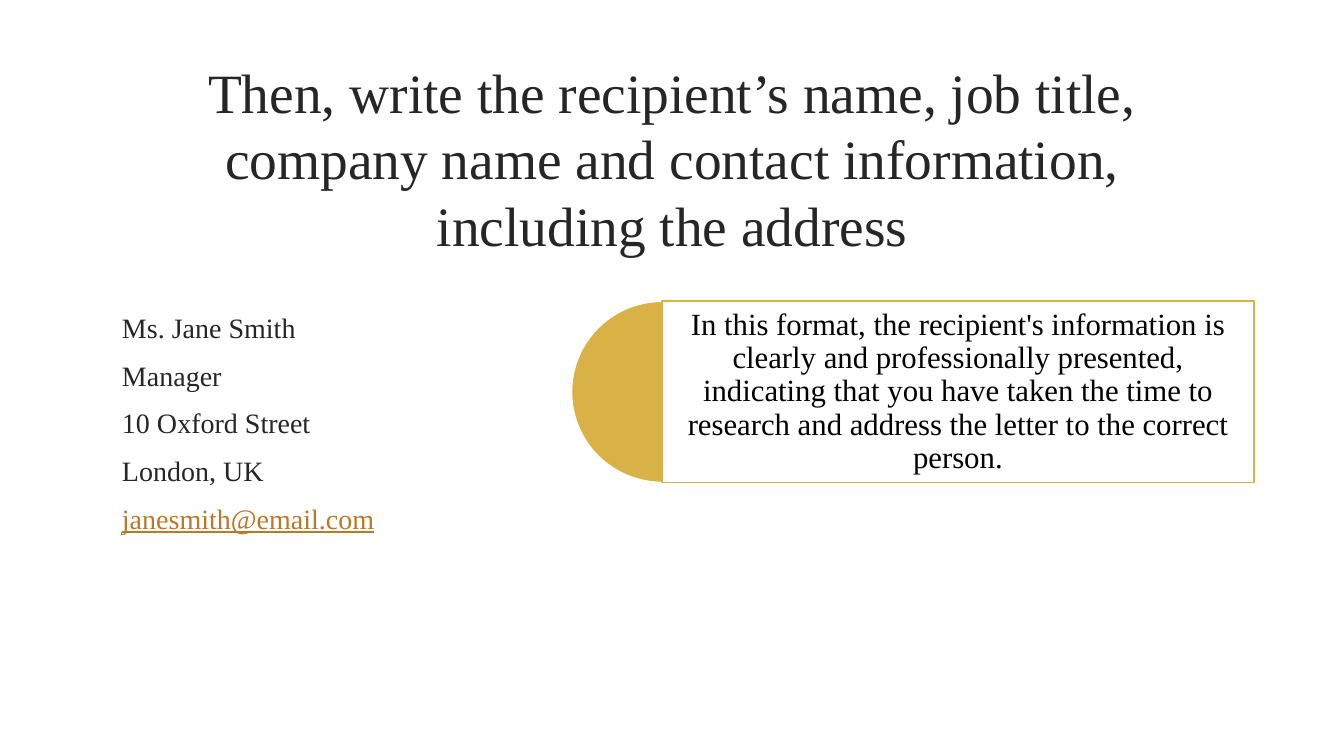
from lxml import etree
from pptx import Presentation
from pptx.dml.color import RGBColor
from pptx.enum import shapes, text
from pptx.oxml import ns
from pptx.util import Cm, Pt

TITLE = ("Then, write the recipient’s name, job title, company name "
         "and contact information, including the address")
ADDRESS = ["Ms. Jane Smith", "Manager", "10 Oxford Street", "London, UK",
           "janesmith@email.com"]
REMARK = ("In this format, the recipient's information is clearly and "
          "professionally presented, indicating that you have taken the time "
          "to research and address the letter to the correct person.")

FONT = "Times New Roman"
DARK = RGBColor(0x26, 0x26, 0x26)
BLACK = RGBColor(0, 0, 0)
WHITE = RGBColor(0xFF, 0xFF, 0xFF)
GOLD = RGBColor(0xD9, 0xB2, 0x47)
LINK = RGBColor(0xBB, 0x78, 0x26)

PIE_LEFT, PIE_TOP, PIE_SIZE = 14.4, 7.59, 4.57
REMARK_WIDTH = 14.91


def place(shape, left, top, width, height):
    shape.left, shape.top = Cm(left), Cm(top)
    shape.width, shape.height = Cm(width), Cm(height)


def style_runs(paragraph, size, color):
    for run in paragraph.runs:
        run.font.name = FONT
        run.font.size = Pt(size)
        run.font.color.rgb = color


def add_panel(slide, kind, left, width, fill, line):
    """Add a shape on the row of the half circle."""
    shape = slide.shapes.add_shape(kind, Cm(left), Cm(PIE_TOP), Cm(width), Cm(PIE_SIZE))
    shape.shadow.inherit = False
    shape.fill.solid()
    shape.fill.fore_color.rgb = fill
    shape.line.color.rgb = line
    shape.line.width = Pt(1.25)
    return shape


def add_title(slide):
    title = slide.shapes.title
    place(title, 3.25, 1.68, 27.38, 4.57)
    frame = title.text_frame
    frame.text = TITLE
    frame.auto_size = text.MSO_AUTO_SIZE.NONE
    frame.vertical_anchor = text.MSO_ANCHOR.MIDDLE
    frame.paragraphs[0].alignment = text.PP_ALIGN.CENTER
    style_runs(frame.paragraphs[0], 39.6, DARK)


def add_address(slide):
    body = slide.placeholders[1]
    place(body, 2.82, 7.7, 13.11, 8.2)
    frame = body.text_frame
    frame.text = "\n".join(ADDRESS)
    frame.auto_size = text.MSO_AUTO_SIZE.NONE
    for index, paragraph in enumerate(frame.paragraphs):
        properties = paragraph._p.get_or_add_pPr()
        properties.set("marL", "0")
        properties.set("indent", "0")
        etree.SubElement(properties, ns.qn("a:buNone"))
        paragraph.space_before = Pt(4 if index else 0)
        paragraph.space_after = Pt(6)
        style_runs(paragraph, 20, DARK)
    email = frame.paragraphs[-1].runs[0].font
    email.color.rgb = LINK
    email.underline = True


def add_remark(slide):
    half_circle = add_panel(slide, shapes.MSO_SHAPE.PIE, PIE_LEFT, PIE_SIZE, GOLD, WHITE)
    half_circle.adjustments[0] = 54
    half_circle.adjustments[1] = 162

    box = add_panel(slide, shapes.MSO_SHAPE.RECTANGLE, PIE_LEFT + PIE_SIZE / 2,
                    REMARK_WIDTH, WHITE, GOLD)
    fill_color = box.fill._xPr.find(ns.qn("a:solidFill"))[0]
    etree.SubElement(fill_color, ns.qn("a:alpha"), val="90000")
    frame = box.text_frame
    frame.text = REMARK
    frame.word_wrap = True
    frame.vertical_anchor = text.MSO_ANCHOR.MIDDLE
    frame.margin_left = frame.margin_right = Cm(0.23)
    frame.margin_top = frame.margin_bottom = Cm(0.23)
    paragraph = frame.paragraphs[0]
    paragraph.alignment = text.PP_ALIGN.CENTER
    paragraph.line_spacing = 0.9
    style_runs(paragraph, 22, BLACK)


def main():
    presentation = Presentation()
    presentation.slide_width, presentation.slide_height = Cm(33.87), Cm(19.05)
    slide = presentation.slides.add_slide(presentation.slide_layouts[1])
    add_title(slide)
    add_address(slide)
    add_remark(slide)
    presentation.save("out.pptx")


if __name__ == "__main__":
    main()
